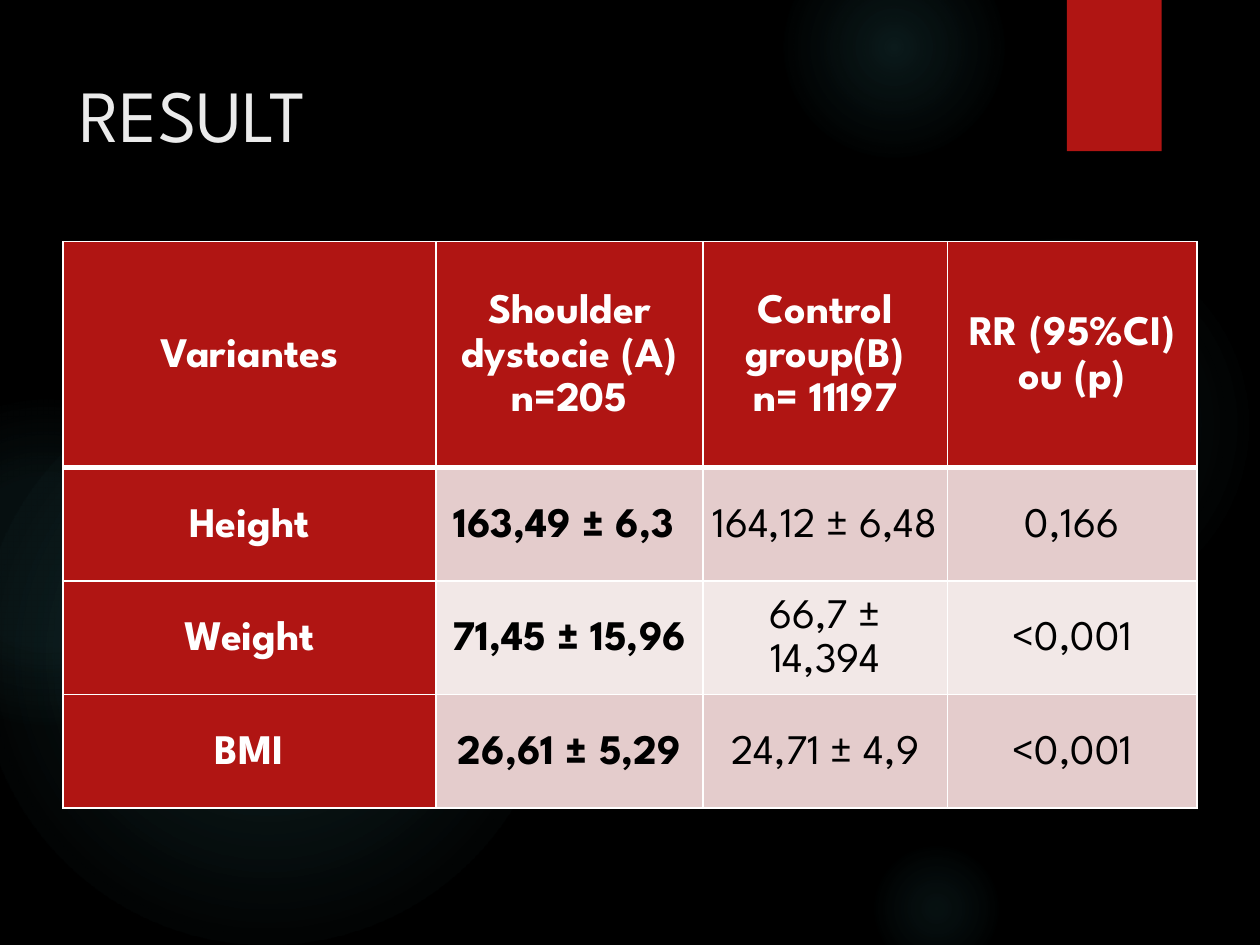
import pptx
import pptx.util
import pptx.dml.color
import pptx.enum.shapes
import pptx.enum.text
import pptx.oxml
import pptx.oxml.ns

Cm, Pt = pptx.util.Cm, pptx.util.Pt
SHAPE = pptx.enum.shapes.MSO_SHAPE
ANCHOR = pptx.enum.text.MSO_ANCHOR
ALIGN = pptx.enum.text.PP_ALIGN

FONT = "League Spartan"
COLORS = {
    "black": "000000", "white": "FFFFFF", "title": "EBEBEB", "red": "B01513",
    "glow": "50B9C1", "band_dark": "E4CCCC", "band_light": "F2E8E7",
}
NS = pptx.oxml.ns.nsdecls("a")

# left, top, diameter in cm; then (position, opacity) stops in percent
GLOWS = [
    (17.5, 4.65, 7.82, [(0, 7), (36, 6), (69, 0)]),
    (15.8, -1.27, 4.45, [(0, 14), (36, 7), (73, 0)]),
    (17.5, 16.94, 2.74, [(0, 9), (36, 5), (66, 0)]),
    (-0.43, 7.42, 11.63, [(0, 11), (36, 10), (75, 0)]),
    (-2.34, 8.05, 6.55, [(0, 8), (36, 8), (72, 0)]),
]
COL_WIDTHS = [7.52, 5.38, 4.93, 5.03]
ROW_HEIGHTS = [4.55, 2.29, 2.29, 2.29]
ROWS = [
    ["Variantes", "Shoulder dystocie (A) n=205", "Control group(B)\nn= 11197", "RR (95%CI)\nou (p)"],
    ["Height", "163,49 ± 6,3 ", "164,12 ± 6,48", "0,166"],
    ["Weight", "71,45 ± 15,96", "66,7 ± 14,394", "<0,001"],
    ["BMI", "26,61 ± 5,29", "24,71 ± 4,9", "<0,001"],
]


def rgb(name):
    return pptx.dml.color.RGBColor.from_string(COLORS[name])


def add_run(p, text, size, color, bold=False):
    r = p.add_run()
    r.text = text
    r.font.name, r.font.size, r.font.bold = FONT, Pt(size), bold
    r.font.color.rgb = rgb(color)


def add_plain_shape(s, kind, left, top, width, height):
    sp = s.shapes.add_shape(kind, Cm(left), Cm(top), Cm(width), Cm(height))
    sp.shadow.inherit = False
    sp.line.fill.background()
    return sp


def add_glow(s, left, top, size, stops):
    """Circle whose colour fades out from its centre."""
    sp = add_plain_shape(s, SHAPE.OVAL, left, top, size, size)
    sp.fill.background()
    stop_xml = "".join(
        f'<a:gs pos="{pos * 1000}"><a:srgbClr val="{COLORS["glow"]}">'
        f'<a:alpha val="{alpha * 1000}"/></a:srgbClr></a:gs>'
        for pos, alpha in stops)
    grad = pptx.oxml.parse_xml(
        f'<a:gradFill {NS} rotWithShape="1"><a:gsLst>{stop_xml}</a:gsLst><a:path path="circle">'
        '<a:fillToRect l="50000" t="50000" r="50000" b="50000"/></a:path></a:gradFill>')
    sp_pr = sp.element.spPr
    sp_pr.replace(sp_pr.find(pptx.oxml.ns.qn("a:noFill")), grad)


def add_ribbon(s, left, top, width, height):
    sp = add_plain_shape(s, SHAPE.RECTANGLE, left, top, width, height)
    sp.fill.solid()
    sp.fill.fore_color.rgb = rgb("red")
    sp.element.spPr.find(pptx.oxml.ns.qn("a:effectLst")).append(pptx.oxml.parse_xml(
        f'<a:outerShdw {NS} blurRad="{Pt(3)}" dist="{Pt(2)}" dir="5400000" rotWithShape="0">'
        f'<a:srgbClr val="{COLORS["black"]}"><a:alpha val="45000"/></a:srgbClr></a:outerShdw>'))


def place_title(s, left, top, width, height):
    title = s.shapes.title
    s.shapes.element.append(title.element)  # in front of the backdrop
    title.left, title.top, title.width, title.height = map(Cm, (left, top, width, height))
    tf = title.text_frame
    tf.word_wrap = True
    tf.vertical_anchor = ANCHOR.TOP
    p = tf.paragraphs[0]
    p.alignment = ALIGN.LEFT
    add_run(p, "RESULT", 42, "title")


def set_borders(cell, widths):
    """Draw white borders; widths maps L, R, T, B to points."""
    tc_pr = cell._tc.get_or_add_tcPr()
    for side, width in widths.items():
        tc_pr.append(pptx.oxml.parse_xml(
            f'<a:ln{side} {NS} w="{Pt(width)}"><a:solidFill>'
            f'<a:srgbClr val="{COLORS["white"]}"/></a:solidFill></a:ln{side}>'))


def fill_cell(cell, text, row, col):
    set_borders(cell, {"L": 1, "R": 1, "T": 3 if row == 1 else 1, "B": 3 if row == 0 else 1})
    heading = row == 0 or col == 0
    cell.fill.solid()
    cell.fill.fore_color.rgb = rgb("red" if heading else "band_dark" if row % 2 else "band_light")
    cell.vertical_anchor = ANCHOR.MIDDLE
    cell.margin_left = cell.margin_right = Cm(0.18)
    cell.margin_top = cell.margin_bottom = Cm(0.03)
    tf = cell.text_frame
    for i, line in enumerate(text.split("\n")):
        p = tf.add_paragraph() if i else tf.paragraphs[0]
        p.alignment = ALIGN.CENTER
        p.line_spacing = 1.15
        add_run(p, line, 24, "white" if heading else "black", bold=heading or col == 1)


def add_result_table(s, left, top):
    table = s.shapes.add_table(len(ROWS), len(COL_WIDTHS), Cm(left), Cm(top),
                               Cm(sum(COL_WIDTHS)), Cm(sum(ROW_HEIGHTS))).table
    for column, width in zip(table.columns, COL_WIDTHS):
        column.width = Cm(width)
    for row, height in zip(table.rows, ROW_HEIGHTS):
        row.height = Cm(height)
    for i, texts in enumerate(ROWS):
        for j, text in enumerate(texts):
            fill_cell(table.cell(i, j), text, i, j)


def main():
    prs = pptx.Presentation()
    prs.slide_width, prs.slide_height = Cm(25.4), Cm(19.05)
    s = prs.slides.add_slide(prs.slide_layouts[5])
    s.background.fill.solid()
    s.background.fill.fore_color.rgb = rgb("black")
    for glow in GLOWS:
        add_glow(s, *glow)
    add_ribbon(s, 21.51, 0, 1.91, 3.05)
    place_title(s, 1.35, 1.27, 19.61, 3.89)
    add_result_table(s, 1.27, 4.87)
    prs.save("out.pptx")


if __name__ == "__main__":
    main()
